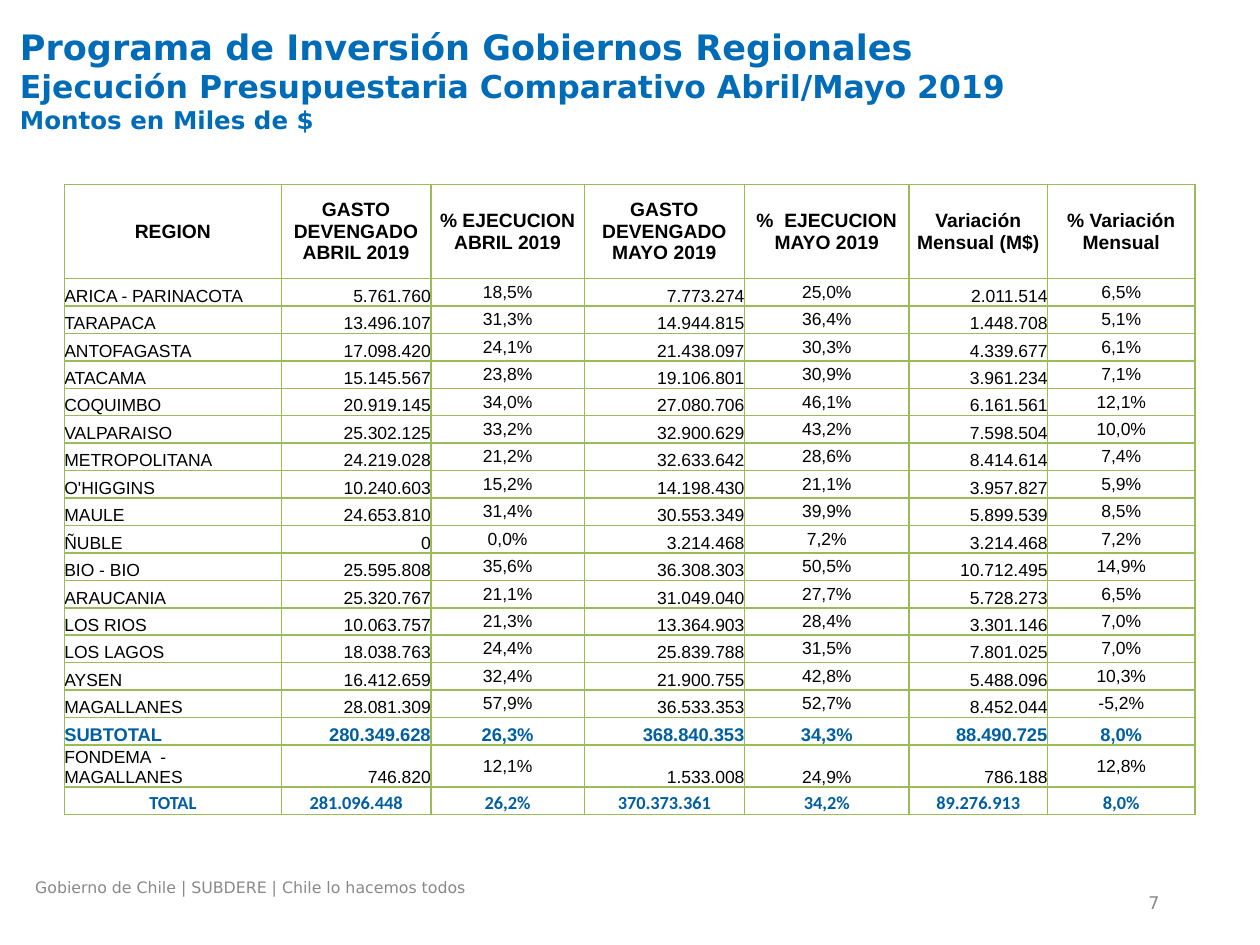
import dataclasses

import lxml.etree
import pptx
import pptx.dml.color
import pptx.enum.text
import pptx.oxml.ns
import pptx.util

Pt = pptx.util.Pt
RGBColor = pptx.dml.color.RGBColor
Align = pptx.enum.text.PP_ALIGN
Anchor = pptx.enum.text.MSO_ANCHOR
qn = pptx.oxml.ns.qn


@dataclasses.dataclass(frozen=True)
class Theme:
    title_color: str = "006CB7"
    total_color: str = "005FA1"
    body_color: str = "000000"
    footer_color: str = "898989"
    border_color: str = "9BBB59"
    title_font: str = "DejaVu Sans"
    table_font: str = "Arial"
    total_font: str = "Calibri"
    title_sizes: tuple = (20, 18, 14)
    header_size: float = 11
    body_size: float = 10
    total_size: float = 10.5
    footer_size: float = 9
    number_size: float = 10


theme = Theme()


def format_run(run, size, name, color, bold=False):
    run.font.size = Pt(size)
    run.font.name = name
    run.font.bold = bold
    run.font.color.rgb = RGBColor.from_string(color)


def add_text(slide, left, top, width, height, text):
    shape = slide.shapes.add_textbox(Pt(left), Pt(top), Pt(width), Pt(height))
    shape.text_frame.word_wrap = True
    shape.text_frame.text = text
    return shape.text_frame


presentation = pptx.Presentation()
presentation.slide_width = Pt(720)
presentation.slide_height = Pt(540)
slide = presentation.slides.add_slide(presentation.slide_layouts[6])

title = add_text(
    slide, 4.3, 10.8, 645.8, 90,
    "Programa de Inversión Gobiernos Regionales\v"
    "Ejecución Presupuestaria Comparativo Abril/Mayo 2019\v"
    "Montos en Miles de $",
)
for run, size in zip(title.paragraphs[0].runs, theme.title_sizes):
    format_run(run, size, theme.title_font, theme.title_color, True)

footer = add_text(slide, 13, 498.2, 466.6, 19.4, "Gobierno de Chile | SUBDERE | Chile lo hacemos todos")
format_run(footer.paragraphs[0].runs[0], theme.footer_size, theme.title_font, theme.footer_color)

number = add_text(slide, 501.8, 508.3, 167.8, 15.1, "7")
number.vertical_anchor = Anchor.MIDDLE
number.paragraphs[0].alignment = Align.RIGHT
format_run(number.paragraphs[0].runs[0], theme.number_size, theme.title_font, theme.footer_color)

rows = [
    ("REGION", "GASTO DEVENGADO ABRIL 2019", "% EJECUCION ABRIL 2019", "GASTO DEVENGADO MAYO 2019",
     "%  EJECUCION MAYO 2019", "Variación Mensual (M$)", "% Variación Mensual"),
    ("ARICA - PARINACOTA", "5.761.760", "18,5%", "7.773.274", "25,0%", "2.011.514", "6,5%"),
    ("TARAPACA", "13.496.107", "31,3%", "14.944.815", "36,4%", "1.448.708", "5,1%"),
    ("ANTOFAGASTA", "17.098.420", "24,1%", "21.438.097", "30,3%", "4.339.677", "6,1%"),
    ("ATACAMA", "15.145.567", "23,8%", "19.106.801", "30,9%", "3.961.234", "7,1%"),
    ("COQUIMBO", "20.919.145", "34,0%", "27.080.706", "46,1%", "6.161.561", "12,1%"),
    ("VALPARAISO", "25.302.125", "33,2%", "32.900.629", "43,2%", "7.598.504", "10,0%"),
    ("METROPOLITANA", "24.219.028", "21,2%", "32.633.642", "28,6%", "8.414.614", "7,4%"),
    ("O'HIGGINS", "10.240.603", "15,2%", "14.198.430", "21,1%", "3.957.827", "5,9%"),
    ("MAULE", "24.653.810", "31,4%", "30.553.349", "39,9%", "5.899.539", "8,5%"),
    ("ÑUBLE", "0", "0,0%", "3.214.468", "7,2%", "3.214.468", "7,2%"),
    ("BIO - BIO", "25.595.808", "35,6%", "36.308.303", "50,5%", "10.712.495", "14,9%"),
    ("ARAUCANIA", "25.320.767", "21,1%", "31.049.040", "27,7%", "5.728.273", "6,5%"),
    ("LOS RIOS", "10.063.757", "21,3%", "13.364.903", "28,4%", "3.301.146", "7,0%"),
    ("LOS LAGOS", "18.038.763", "24,4%", "25.839.788", "31,5%", "7.801.025", "7,0%"),
    ("AYSEN", "16.412.659", "32,4%", "21.900.755", "42,8%", "5.488.096", "10,3%"),
    ("MAGALLANES", "28.081.309", "57,9%", "36.533.353", "52,7%", "8.452.044", "-5,2%"),
    ("SUBTOTAL", "280.349.628", "26,3%", "368.840.353", "34,3%", "88.490.725", "8,0%"),
    ("FONDEMA  - MAGALLANES", "746.820", "12,1%", "1.533.008", "24,9%", "786.188", "12,8%"),
    ("TOTAL", "281.096.448", "26,2%", "370.373.361", "34,2%", "89.276.913", "8,0%"),
]
column_widths = (124, 85.4, 87.8, 91.4, 94.2, 79, 84.4)
column_alignments = (Align.LEFT,) + (Align.RIGHT, Align.CENTER) * 3
header_height, row_height = 53.7, 15.68

table = slide.shapes.add_table(
    len(rows), len(column_widths), Pt(36.8), Pt(105.5),
    Pt(sum(column_widths)), Pt(header_height + row_height * (len(rows) - 1)),
).table
table.first_row = False
table.horz_banding = False
for column, width in zip(table.columns, column_widths):
    column.width = Pt(width)

for row_index, values in enumerate(rows):
    is_header = row_index == 0
    is_total = values[0] == "TOTAL"
    is_summary = values[0] in ("SUBTOTAL", "TOTAL")
    table.rows[row_index].height = Pt(header_height if is_header else row_height)
    size = theme.header_size if is_header else theme.total_size if is_summary else theme.body_size
    font = theme.total_font if is_total else theme.table_font
    color = theme.total_color if is_summary else theme.body_color

    for column_index, value in enumerate(values):
        cell = table.cell(row_index, column_index)
        cell.margin_left = cell.margin_right = cell.margin_top = cell.margin_bottom = 0
        alignment = Align.CENTER if is_header or is_total else column_alignments[column_index]
        is_low_percent = values[0].startswith("FONDEMA") and column_index == 4
        is_middle = is_header or (alignment == Align.CENTER and not is_summary and not is_low_percent)
        cell.vertical_anchor = Anchor.MIDDLE if is_middle else Anchor.BOTTOM
        cell.text_frame.text = value
        paragraph = cell.text_frame.paragraphs[0]
        paragraph.alignment = alignment
        format_run(paragraph.runs[0], size, font, color, is_header or is_summary)

        properties = cell._tc.get_or_add_tcPr()
        for side in ("a:lnL", "a:lnR", "a:lnT", "a:lnB"):
            border = lxml.etree.SubElement(properties, qn(side), w=str(Pt(1)))
            border_fill = lxml.etree.SubElement(border, qn("a:solidFill"))
            lxml.etree.SubElement(border_fill, qn("a:srgbClr"), val=theme.border_color)
        cell.fill.background()

presentation.save("out.pptx")
